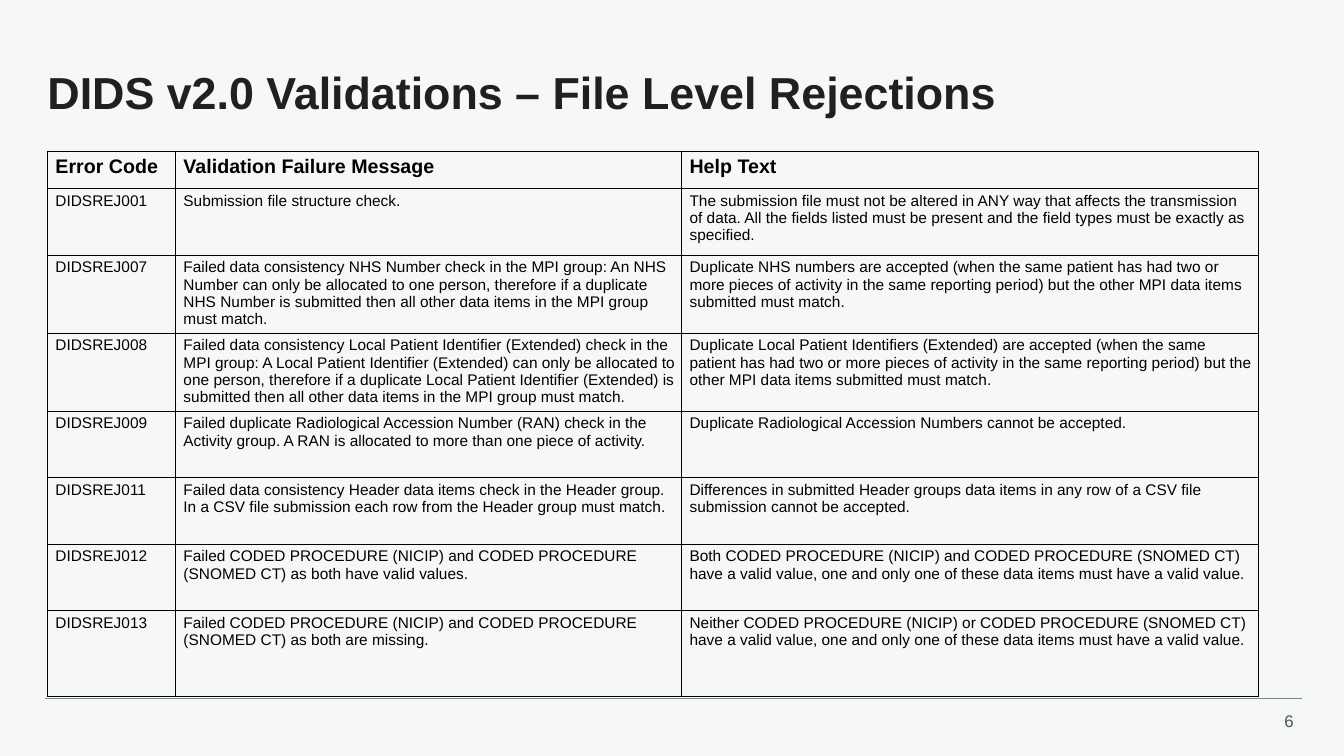
from dataclasses import dataclass

from lxml.etree import SubElement
from pptx import Presentation
from pptx.dml.color import RGBColor
from pptx.enum.shapes import MSO_CONNECTOR as Connector
from pptx.enum.text import MSO_ANCHOR as Anchor, MSO_AUTO_SIZE as AutoSize, PP_ALIGN as Align
from pptx.oxml.ns import qn
from pptx.util import Inches, Pt


@dataclass(frozen=True)
class Theme:
    font: str = "Arial"
    background: str = "F6F8F8"
    title_color: str = "231F20"
    text_color: str = "000000"
    rule_color: str = "768692"
    number_color: str = "425563"
    title_size: int = 32
    header_size: int = 14
    number_size: int = 12
    body_size: int = 11
    line_width: float = 0.5


COLUMN_WIDTHS = [1.27, 5.02, 5.72]
ROW_HEIGHTS = [0.37, 0.66, 0.67, 0.7, 0.66, 0.66, 0.66, 0.85]
REJECTIONS = [
    ("Error Code", "Validation Failure Message", "Help Text"),
    ("DIDSREJ001",
     "Submission file structure check.",
     "The submission file must not be altered in ANY way that affects the transmission of data. "
     "All the fields listed must be present and the field types must be exactly as specified."),
    ("DIDSREJ007",
     "Failed data consistency NHS Number check in the MPI group: An NHS Number can only be "
     "allocated to one person, therefore if a duplicate NHS Number is submitted then all other "
     "data items in the MPI group must match.",
     "Duplicate NHS numbers are accepted (when the same patient has had two or more pieces of "
     "activity in the same reporting period) but the other MPI data items submitted must match."),
    ("DIDSREJ008",
     "Failed data consistency Local Patient Identifier (Extended) check in the MPI group: A Local "
     "Patient Identifier (Extended) can only be allocated to one person, therefore if a duplicate "
     "Local Patient Identifier (Extended) is submitted then all other data items in the MPI group "
     "must match.",
     "Duplicate Local Patient Identifiers (Extended) are accepted (when the same patient has had "
     "two or more pieces of activity in the same reporting period) but the other MPI data items "
     "submitted must match."),
    ("DIDSREJ009",
     "Failed duplicate Radiological Accession Number (RAN) check in the Activity group. A RAN is "
     "allocated to more than one piece of activity.",
     "Duplicate Radiological Accession Numbers cannot be accepted."),
    ("DIDSREJ011",
     "Failed data consistency Header data items check in the Header group. In a CSV file "
     "submission each row from the Header group must match.",
     "Differences in submitted Header groups data items in any row of a CSV file submission "
     "cannot be accepted."),
    ("DIDSREJ012",
     "Failed CODED PROCEDURE (NICIP) and CODED PROCEDURE (SNOMED CT) as both have valid values.",
     "Both CODED PROCEDURE (NICIP) and CODED PROCEDURE (SNOMED CT) have a valid value, one and "
     "only one of these data items must have a valid value."),
    ("DIDSREJ013",
     "Failed CODED PROCEDURE (NICIP) and CODED PROCEDURE (SNOMED CT) as both are missing.",
     "Neither CODED PROCEDURE (NICIP) or CODED PROCEDURE (SNOMED CT) have a valid value, one and "
     "only one of these data items must have a valid value."),
]


def set_attributes(target, values):
    for name, value in values.items():
        setattr(target, name, value)


class SlideBuilder:
    def __init__(self, presentation, theme):
        self.theme = theme
        self.slide = presentation.slides.add_slide(presentation.slide_layouts[5])
        fill = self.slide.background.fill
        fill.solid()
        fill.fore_color.rgb = RGBColor.from_string(theme.background)

    def add_text(self, frame, text, size, color, bold=False, **paragraph_format):
        paragraph = frame.paragraphs[0]
        set_attributes(paragraph, paragraph_format)
        run = paragraph.add_run()
        run.text = text
        set_attributes(run.font, {"name": self.theme.font, "size": Pt(size), "bold": bold})
        run.font.color.rgb = RGBColor.from_string(color)

    def title(self, text, left, top, width, height):
        shape = self.slide.shapes.title
        set_attributes(shape, {"left": Inches(left), "top": Inches(top),
                               "width": Inches(width), "height": Inches(height)})
        set_attributes(shape.text_frame, {
            "margin_left": 0, "margin_right": 0, "margin_top": 0, "margin_bottom": 0,
            "vertical_anchor": Anchor.MIDDLE, "auto_size": AutoSize.NONE, "word_wrap": True})
        self.add_text(shape.text_frame, text, self.theme.title_size, self.theme.title_color, True,
                      alignment=Align.LEFT, line_spacing=0.9, space_after=Pt(6))

    def rule(self, left, right, y):
        line = self.slide.shapes.add_connector(
            Connector.STRAIGHT, Inches(left), Inches(y), Inches(right), Inches(y))
        line.line.width = Pt(self.theme.line_width)
        line.line.color.rgb = RGBColor.from_string(self.theme.rule_color)
        SubElement(line._element.spPr, qn("a:effectLst"))

    def page_number(self, text, left, top, width, height):
        box = self.slide.shapes.add_textbox(*map(Inches, (left, top, width, height)))
        set_attributes(box.text_frame, {"word_wrap": False, "auto_size": AutoSize.SHAPE_TO_FIT_TEXT})
        self.add_text(box.text_frame, text, self.theme.number_size, self.theme.number_color,
                      alignment=Align.RIGHT)

    def table(self, rows, left, top, widths, heights):
        table = self.slide.shapes.add_table(
            len(rows), len(widths), Inches(left), Inches(top),
            Inches(sum(widths)), Inches(sum(heights))).table
        set_attributes(table, {"first_row": False, "horz_banding": False})
        for column, width in zip(table.columns, widths):
            column.width = Inches(width)
        for row_index, (row, height, texts) in enumerate(zip(table.rows, heights, rows)):
            row.height = Inches(height)
            is_header = row_index == 0
            size = self.theme.header_size if is_header else self.theme.body_size
            for cell, text in zip(row.cells, texts):
                set_attributes(cell, {"margin_left": Inches(0.08), "margin_top": Inches(0.04),
                                      "margin_right": Inches(0.04), "margin_bottom": 0})
                self.add_text(cell.text_frame, text, size, self.theme.text_color, is_header)
                self.border(cell)
                cell.fill.background()

    def border(self, cell):
        properties = cell._tc.get_or_add_tcPr()
        for side in ("a:lnL", "a:lnR", "a:lnT", "a:lnB"):
            line = SubElement(properties, qn(side), w=str(Pt(self.theme.line_width)))
            fill = SubElement(line, qn("a:solidFill"))
            SubElement(fill, qn("a:srgbClr"), val=self.theme.text_color)


def main():
    presentation = Presentation()
    set_attributes(presentation, {"slide_width": Inches(13.33), "slide_height": Inches(7.5)})
    builder = SlideBuilder(presentation, Theme())
    builder.rule(0.45, 12.91, 6.93)
    builder.page_number("6", 12.52, 7, 0.41, 0.3)
    builder.title("DIDS v2.0 Validations – File Level Rejections", 0.47, 0.47, 12.47, 0.95)
    builder.table(REJECTIONS, 0.47, 1.5, COLUMN_WIDTHS, ROW_HEIGHTS)
    presentation.save("out.pptx")


if __name__ == "__main__":
    main()
